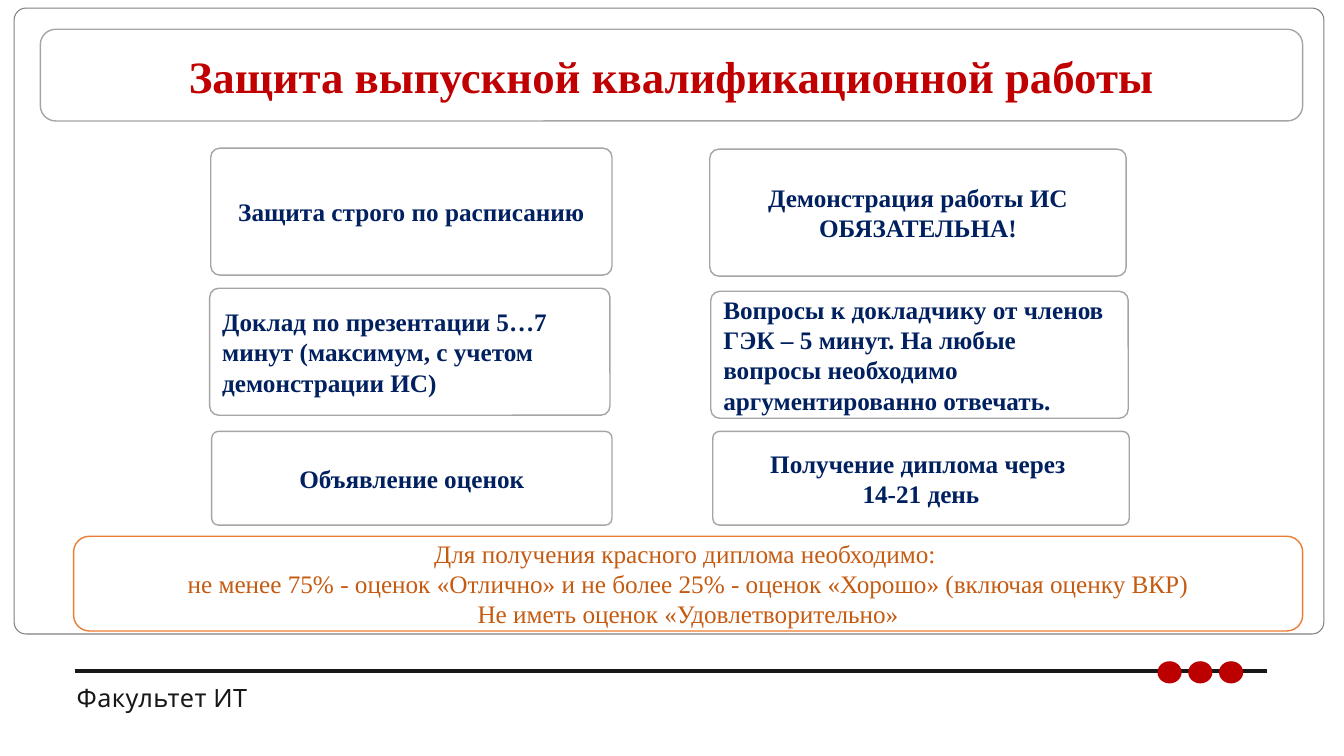
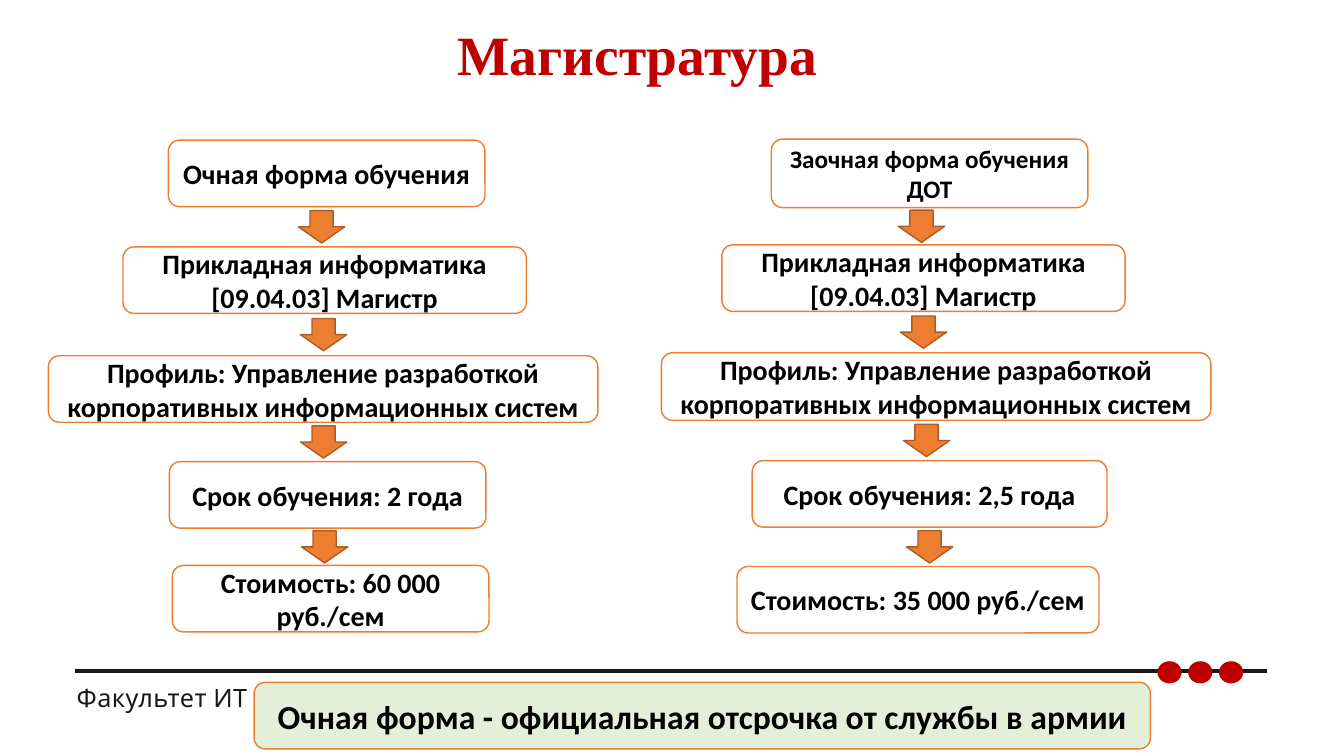
from lxml import etree
from pptx import Presentation
from pptx.dml.color import RGBColor
from pptx.enum import shapes, text
from pptx.oxml import ns
from pptx.util import Inches, Pt

RED = RGBColor(0xC0, 0x00, 0x00)
DOT = RGBColor(0xBC, 0x00, 0x00)
NAVY = RGBColor(0x00, 0x20, 0x60)
BLACK = RGBColor(0x00, 0x00, 0x00)
INK = RGBColor(0x18, 0x18, 0x18)
WHITE = RGBColor(0xFF, 0xFF, 0xFF)
GRAY = RGBColor(0xA5, 0xA5, 0xA5)
EDGE = RGBColor(0x80, 0x80, 0x80)
ORANGE = RGBColor(0xED, 0x7D, 0x31)
BROWN = RGBColor(0xAF, 0x5C, 0x24)
RUST = RGBColor(0xC5, 0x5A, 0x11)
GREEN = RGBColor(0xE2, 0xF0, 0xD9)

SERIF = "Times New Roman"
CENTER = text.PP_ALIGN.CENTER
LEFT = text.PP_ALIGN.LEFT
KIND = shapes.MSO_SHAPE

HEAD = {"name": SERIF, "size": Pt(32), "bold": True}
CARD = {"name": SERIF, "size": Pt(18), "bold": True}
NOTE = {"name": SERIF, "size": Pt(18), "bold": False}
STEP = {"name": "Calibri", "size": Pt(20), "bold": True}
FOOT = {"name": "Karla", "size": Pt(18), "bold": False}


def write(frame, words, style, color, align=CENTER):
    frame.text = words
    frame.word_wrap = True
    frame.auto_size = text.MSO_AUTO_SIZE.NONE
    for para in frame.paragraphs:
        para.alignment = align
        for run in para.runs:
            for key, value in style.items():
                setattr(run.font, key, value)
            run.font.color.rgb = color


def draw(slide, kind, area, fill=None, line=None, width=1, round=None):
    shape = slide.shapes.add_shape(kind, *map(Inches, area))
    shape.shadow.inherit = False
    if fill is None:
        shape.fill.background()
    else:
        shape.fill.solid()
        shape.fill.fore_color.rgb = fill
    if line is None:
        shape.line.fill.background()
    else:
        shape.line.color.rgb = line
        shape.line.width = Pt(width)
    if round is not None:
        shape.adjustments[0] = round
    shape.text_frame.vertical_anchor = text.MSO_ANCHOR.MIDDLE
    return shape


deck = Presentation()
deck.slide_width, deck.slide_height = Inches(13.33), Inches(7.5)

heads = [
    ("Защита выпускной квалификационной работы", (0.4, 0.29, 12.52, 0.91), 32, 1),
    ("Магистратура", (0.57, 0.23, 11.5, 0.69), 39.6, 0.9),
]
for words, area, size, space in heads:
    slide = deck.slides.add_slide(deck.slide_layouts[5])
    title = slide.shapes.title
    title.left, title.top, title.width, title.height = map(Inches, area)
    write(title.text_frame, words, HEAD | {"size": Pt(size)}, RED)
    title.text_frame.vertical_anchor = text.MSO_ANCHOR.MIDDLE
    title.text_frame.paragraphs[0].line_spacing = space

    label = slide.shapes.add_textbox(*map(Inches, (0.75, 6.77, 2.34, 0.24)))
    frame = label.text_frame
    for side in ("left", "top", "right", "bottom"):
        setattr(frame, f"margin_{side}", 0)
    write(frame, "Факультет ИТ", FOOT, INK, LEFT)
    para = frame.paragraphs[0]
    para.runs[0].font._element.set("spc", "30")
    para._p.get_or_add_pPr().set("marL", str(Inches(0.01)))

    rule = slide.shapes.add_connector(
        shapes.MSO_CONNECTOR.STRAIGHT, *map(Inches, (0.74, 6.66, 12.57, 6.66)))
    rule.line.color.rgb = INK
    rule.line.width = Pt(3.1)
    etree.SubElement(rule._element.spPr, ns.qn("a:effectLst"))
    for i in range(3):
        draw(slide, KIND.OVAL, (11.48 + 0.305 * i, 6.56, 0.24, 0.22), DOT)

thesis, master = deck.slides

draw(thesis, KIND.ROUNDED_RECTANGLE, (0.14, 0.08, 12.99, 6.21), None, EDGE, 0.75, 0.019)
draw(thesis, KIND.ROUNDED_RECTANGLE, heads[0][1], None, GRAY)

cards = [
    ((2.09, 1.47, 3.98, 1.26), "Защита строго по расписанию", CENTER),
    ((2.08, 2.86, 3.97, 1.26),
     "Доклад по презентации 5…7 минут (максимум, с учетом демонстрации ИС)", LEFT),
    ((2.1, 4.28, 3.97, 0.93), "Объявление оценок", CENTER),
    ((7.04, 1.48, 4.13, 1.26), "Демонстрация работы ИС ОБЯЗАТЕЛЬНА!", CENTER),
    ((7.05, 2.89, 4.14, 1.26),
     "Вопросы к докладчику от членов ГЭК – 5 минут. На любые вопросы "
     "необходимо аргументированно отвечать.", LEFT),
    ((7.07, 4.28, 4.13, 0.93), "Получение диплома через \n14-21 день", CENTER),
]
for area, words, align in cards:
    card = draw(thesis, KIND.ROUNDED_RECTANGLE, area, WHITE, GRAY, round=0.071)
    write(card.text_frame, words, CARD, NAVY, align)

honors = draw(thesis, KIND.ROUNDED_RECTANGLE, (0.73, 5.32, 12.19, 0.94), WHITE, ORANGE)
write(honors.text_frame,
      "Для получения красного диплома необходимо: \n"
      "не менее 75% - оценок «Отлично» и не более 25% - оценок «Хорошо» (включая оценку ВКР)\n"
      "Не иметь оценок «Удовлетворительно»", NOTE, RUST)

course = "Прикладная информатика [09.04.03] Магистр"
track = "Профиль: Управление разработкой корпоративных информационных систем"
flows = [
    ([((1.67, 1.39, 3.14, 0.66), "Очная форма обучения", 20),
      ((1.22, 2.45, 4, 0.66), course, 20),
      ((0.48, 3.53, 5.45, 0.66), track, 20),
      ((1.68, 4.58, 3.14, 0.66), "Срок обучения: 2 года", 20),
      ((1.71, 5.61, 3.14, 0.66), "Стоимость: 60 000 руб./сем", 20)],
     (2.96, 2.98, 2.98, 2.99)),
    ([((7.65, 1.38, 3.14, 0.68), "Заочная форма обучения ДОТ", 18),
      ((7.16, 2.43, 4, 0.66), course, 20),
      ((6.56, 3.5, 5.45, 0.67), track, 20),
      ((7.46, 4.57, 3.52, 0.66), "Срок обучения: 2,5 года", 20),
      ((7.31, 5.62, 3.59, 0.66), "Стоимость: 35 000 руб./сем", 20)],
     (8.91, 8.93, 8.96, 8.99)),
]
for steps, lefts in flows:
    for area, words, size in steps:
        step = draw(master, KIND.ROUNDED_RECTANGLE, area, WHITE, ORANGE)
        write(step.text_frame, words, STEP | {"size": Pt(size)}, BLACK)
    for left, (above, *_), (below, *_) in zip(lefts, steps, steps[1:]):
        middle = (above[1] + above[3] + below[1]) / 2
        draw(master, KIND.DOWN_ARROW, (left, middle - 0.16, 0.46, 0.32), ORANGE, BROWN)

banner = draw(master, KIND.ROUNDED_RECTANGLE, (2.52, 6.77, 8.89, 0.66), GREEN, ORANGE)
write(banner.text_frame, "Очная форма - официальная отсрочка от службы в армии",
      STEP | {"size": Pt(24)}, BLACK)

deck.save("out.pptx")
